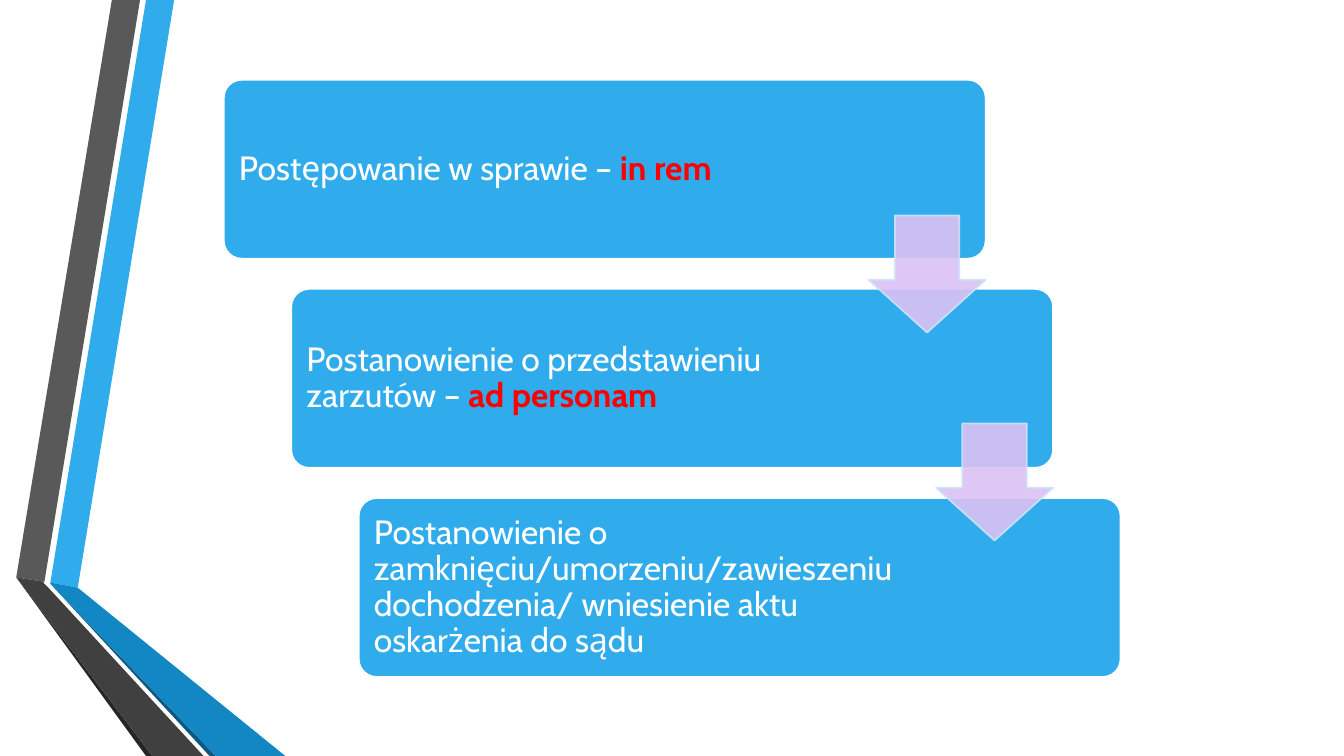
from dataclasses import dataclass

from lxml import etree
from pptx import Presentation
from pptx.dml.color import RGBColor
from pptx.enum.shapes import MSO_SHAPE
from pptx.enum.text import MSO_ANCHOR, PP_ALIGN
from pptx.oxml.ns import qn
from pptx.util import Cm, Pt

ROUND = MSO_SHAPE.ROUNDED_RECTANGLE
DOWN = MSO_SHAPE.DOWN_ARROW
MIDDLE = MSO_ANCHOR.MIDDLE
LEFT = PP_ALIGN.LEFT


@dataclass(frozen=True)
class Theme:
    font: str = "Cabin"
    size: int = 24
    edge: float = 1.25
    white: str = "FFFFFF"
    red: str = "FF0000"
    blue: str = "30ACEC"
    azure: str = "1287C3"
    navy: str = "0C5A82"
    grey: str = "595959"
    coal: str = "404040"
    black: str = "262626"
    lilac: str = "DBC2F3"
    ice: str = "CDE3F8"


THEME = Theme()

RIBBONS = [
    (THEME.blue, [(1.27, 14.68), (1.96, 14.81), (4.39, 0), (3.68, 0)]),
    (THEME.grey, [(3.53, 0), (2.82, 0), (0.41, 14.55), (1.12, 14.66)]),
    (THEME.black, [(0.41, 14.55), (3.68, 19.05), (3.84, 19.05)]),
    (THEME.navy, [(1.27, 14.71), (5.28, 19.05), (5.44, 19.05)]),
    (THEME.azure, [(1.27, 14.71), (5.44, 19.05), (7.19, 19.05),
                   (1.96, 14.81), (1.27, 14.68)]),
    (THEME.coal, [(5.13, 19.05), (1.22, 14.81), (1.09, 14.68),
                  (1.12, 14.66), (0.41, 14.55), (3.84, 19.05)]),
]

STAGES = [
    ("Postępowanie w sprawie – ", "in rem"),
    ("Postanowienie o przedstawieniu zarzutów – ", "ad personam"),
    ("Postanowienie o zamknięciu/umorzeniu/zawieszeniu dochodzenia/ "
     "wniesienie aktu oskarżenia do sądu", ""),
]


def apply(item, values):
    for name, value in values.items():
        setattr(item, name, value)


def paint(shape, fill, line=None):
    shape.shadow.inherit = False
    shape.fill.solid()
    shape.fill.fore_color.rgb = RGBColor.from_string(fill)
    if line:
        shape.line.color.rgb = RGBColor.from_string(line)
        shape.line.width = Pt(THEME.edge)
    else:
        shape.line.fill.background()


def fade(shape, share):
    for color in shape._element.spPr.iter(qn("a:srgbClr")):
        etree.SubElement(color, qn("a:alpha"), val=str(share * 1000))


def add_ribbon(slide, color, points):
    first, *rest = [(Cm(x), Cm(y)) for x, y in points]
    pen = slide.shapes.build_freeform(*first)
    pen.add_line_segments(rest, close=True)
    paint(pen.convert_to_shape(), color)


def add_run(para, text, color, bold):
    run = para.add_run()
    run.text = text
    apply(run.font, {"name": THEME.font, "size": Pt(THEME.size), "bold": bold})
    run.font.color.rgb = RGBColor.from_string(color)


def add_stage(slide, left, top, plain, strong):
    box = slide.shapes.add_shape(ROUND, Cm(left), Cm(top), Cm(19.2), Cm(4.51))
    box.adjustments[0] = 0.1
    paint(box, THEME.blue, THEME.white)
    apply(box.text_frame, {
        "word_wrap": True, "vertical_anchor": MIDDLE,
        "margin_left": Cm(0.25), "margin_right": Cm(4.87),
        "margin_top": Cm(0.25), "margin_bottom": Cm(0.25),
    })
    para = box.text_frame.paragraphs[0]
    apply(para, {"alignment": LEFT, "line_spacing": 0.9})
    add_run(para, plain, THEME.white, False)
    if strong:
        add_run(para, strong, THEME.red, True)


def add_arrow(slide, left, top):
    arrow = slide.shapes.add_shape(DOWN, Cm(left), Cm(top), Cm(2.95), Cm(2.95))
    arrow.adjustments[0] = 0.55
    arrow.adjustments[1] = 0.45
    paint(arrow, THEME.lilac, THEME.ice)
    fade(arrow, 90)


def main():
    deck = Presentation()
    apply(deck, {"slide_width": Cm(33.87), "slide_height": Cm(19.05)})
    slide = deck.slides.add_slide(deck.slide_layouts[6])
    for color, points in RIBBONS:
        add_ribbon(slide, color, points)
    for i, (plain, strong) in enumerate(STAGES):
        add_stage(slide, 5.64 + 1.7 * i, 2.01 + 5.27 * i, plain, strong)
    for i in range(len(STAGES) - 1):
        add_arrow(slide, 21.89 + 1.7 * i, 5.43 + 5.24 * i)
    deck.save("out.pptx")


if __name__ == "__main__":
    main()
